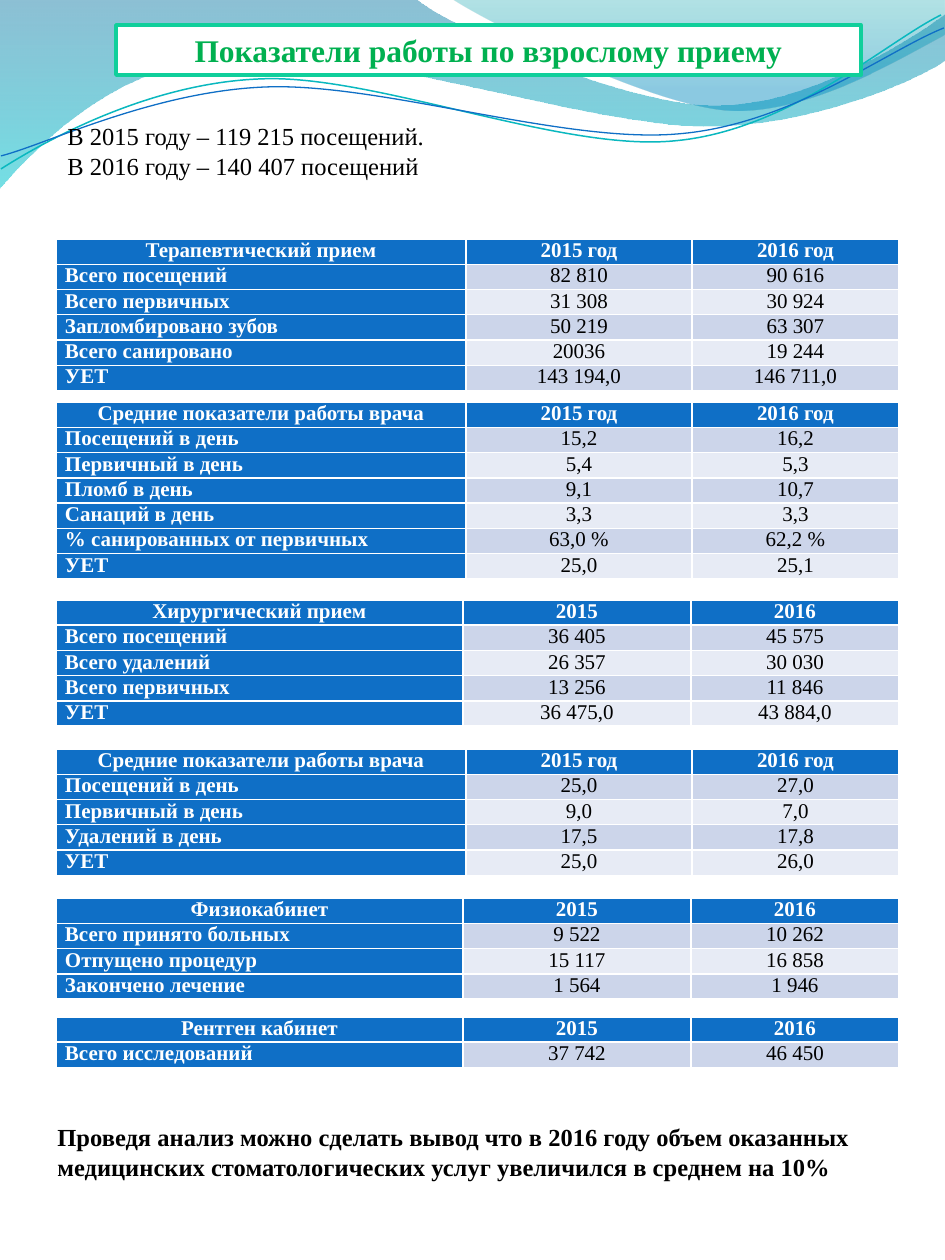
from dataclasses import dataclass

from lxml.etree import SubElement
from pptx import Presentation
from pptx.dml.color import RGBColor
from pptx.enum.text import MSO_ANCHOR as Anchor, MSO_AUTO_SIZE as AutoSize, PP_ALIGN as Align
from pptx.oxml import parse_xml
from pptx.oxml.ns import nsdecls, qn
from pptx.util import Pt

EMU_PER_PX = 914400 / 126
TABLE_LEFT = 56
ROW_HEIGHT = 25
CELL_MARGIN = 9


@dataclass(frozen=True)
class Theme:
    font: str = "Times New Roman"
    title_size: int = 18
    text_size: int = 14
    table_size: int = 12
    white: str = "FFFFFF"
    black: str = "000000"
    title: str = "00B050"
    frame: str = "10CF9B"
    accent: str = "0F6FC6"
    teal: str = "0AB8BF"
    bands: tuple = ("CCD5EA", "E7EBF5")
    broad_wave: tuple = ((0, "0074A1", 45), (100, "00C6CF", 55))
    corner_wave: tuple = ((0, "00A1A9", 30), (80, "008BBF", 45))


THEME = Theme()

BROAD_WAVE = [
    (0, -1), (416, -1), (450, 28, 627, 106, 717, 106), (806, 106, 906, 43, 945, 15),
    (946, 60), (930, 73, 822, 127, 704, 127), (587, 126, 360, 47, 243, 57),
    (122, 59, 43, 140, -1, 190),
]
CORNER_WAVE = [
    (452, -1), (481, 19, 644, 103, 727, 110), (809, 116, 908, 54, 945, 35), (945, 0),
]
TEAL_CURVE = [
    (1, 169), (45, 141, 149, 83, 261, 79), (373, 74, 561, 152, 674, 141),
    (789, 131, 886, 42, 941, 15),
]
BLUE_CURVE = [
    (1, 156), (45, 145, 154, 91, 267, 87), (381, 83, 565, 144, 678, 134),
    (791, 125, 888, 50, 944, 28),
]

WIDE_COLUMNS = (410, 226, 207)
NARROW_COLUMNS = (407, 228, 208)
AVERAGES_HEADER = ("Средние показатели работы врача", "2015 год", "2016 год")

TABLES = [
    (239, WIDE_COLUMNS, Align.JUSTIFY, [
        ("Терапевтический прием", "2015 год", "2016 год"),
        ("Всего посещений", "82 810", "90 616"),
        ("Всего первичных", "31 308", "30 924"),
        ("Запломбировано зубов", "50 219", "63 307"),
        ("Всего санировано", "20036", "19 244"),
        ("УЕТ", "143 194,0", "146 711,0"),
    ]),
    (402, WIDE_COLUMNS, Align.LEFT, [
        AVERAGES_HEADER,
        ("Посещений в день", "15,2", "16,2"),
        ("Первичный в день", "5,4", "5,3"),
        ("Пломб в день", "9,1", "10,7"),
        ("Санаций в день", "3,3", "3,3"),
        ("% санированных от первичных", "63,0 %", "62,2 %"),
        ("УЕТ", "25,0", "25,1"),
    ]),
    (600, NARROW_COLUMNS, Align.JUSTIFY, [
        ("Хирургический прием", "2015", "2016"),
        ("Всего посещений", "36 405", "45 575"),
        ("Всего удалений", "26 357", "30 030"),
        ("Всего первичных", "13 256", "11 846"),
        ("УЕТ", "36 475,0", "43 884,0"),
    ]),
    (749, WIDE_COLUMNS, Align.LEFT, [
        AVERAGES_HEADER,
        ("Посещений в день", "25,0", "27,0"),
        ("Первичный в день", "9,0", "7,0"),
        ("Удалений в день", "17,5", "17,8"),
        ("УЕТ", "25,0", "26,0"),
    ]),
    (898, NARROW_COLUMNS, Align.JUSTIFY, [
        ("Физиокабинет", "2015", "2016"),
        ("Всего принято больных", "9 522", "10 262"),
        ("Отпущено процедур", "15 117", "16 858"),
        ("Закончено лечение", "1 564", "1 946"),
    ]),
    (1017, NARROW_COLUMNS, Align.JUSTIFY, [
        ("Рентген кабинет", "2015", "2016"),
        ("Всего исследований", "37 742", "46 450"),
    ]),
]


def px(value):
    return round(value * EMU_PER_PX)


def color(value):
    return RGBColor.from_string(value)


def add_run(paragraph, text, size, rgb, bold=False):
    run = paragraph.add_run()
    run.text = text
    run.font.name = THEME.font
    run.font.size = Pt(size)
    run.font.bold = bold
    run.font.color.rgb = color(rgb)


def bend_lines(shape, segments):
    lines = list(shape.element.iter(qn("a:lnTo")))
    for line, segment in zip(lines, segments):
        if len(segment) == 2:
            continue
        line.clear()
        line.tag = qn("a:cubicBezTo")
        for x, y in zip(segment[::2], segment[1::2]):
            SubElement(line, qn("a:pt"), x=str(px(x) - shape.left), y=str(px(y) - shape.top))


def add_outline(slide, segments, close):
    start, *rest = [(px(segment[-2]), px(segment[-1])) for segment in segments]
    builder = slide.shapes.build_freeform(*start)
    builder.add_line_segments(rest, close=close)
    shape = builder.convert_to_shape()
    bend_lines(shape, segments[1:])
    shape.shadow.inherit = False
    shape.fill.background()
    return shape


def add_wave(slide, segments, stops):
    shape = add_outline(slide, segments, True)
    shape.line.fill.background()
    stop_xml = "".join(
        f'<a:gs pos="{position * 1000}"><a:srgbClr val="{rgb}">'
        f'<a:alpha val="{opacity * 1000}"/></a:srgbClr></a:gs>'
        for position, rgb, opacity in stops
    )
    gradient = parse_xml(
        f'<a:gradFill {nsdecls("a")}><a:gsLst>{stop_xml}</a:gsLst>'
        '<a:lin ang="5400000" scaled="0"/></a:gradFill>'
    )
    properties = shape.element.spPr
    properties.replace(properties.find(qn("a:noFill")), gradient)


def add_curve(slide, segments, rgb, width):
    shape = add_outline(slide, segments, False)
    shape.line.color.rgb = color(rgb)
    shape.line.width = Pt(width)


def format_title(slide, text):
    title = slide.shapes.title
    slide.shapes.element.append(title.element)
    title.left, title.top, title.width, title.height = map(px, (116, 25, 745, 50))
    title.fill.solid()
    title.fill.fore_color.rgb = color(THEME.white)
    title.line.color.rgb = color(THEME.frame)
    title.line.width = Pt(2)
    frame = title.text_frame
    frame.auto_size = AutoSize.NONE
    frame.vertical_anchor = Anchor.MIDDLE
    frame.paragraphs[0].alignment = Align.CENTER
    add_run(frame.paragraphs[0], text, THEME.title_size, THEME.title, True)


def add_text(slide, box, lines, bold=False):
    frame = slide.shapes.add_textbox(*map(px, box)).text_frame
    frame.word_wrap = True
    for index, line in enumerate(lines):
        paragraph = frame.add_paragraph() if index else frame.paragraphs[0]
        add_run(paragraph, line, THEME.text_size, THEME.black, bold)


def format_cell(cell, text, row, column, label_alignment):
    is_label = row == 0 or column == 0
    cell.fill.solid()
    cell.fill.fore_color.rgb = color(THEME.accent if is_label else THEME.bands[(row - 1) % 2])
    cell.margin_left = cell.margin_right = px(CELL_MARGIN)
    cell.margin_top = cell.margin_bottom = 0
    paragraph = cell.text_frame.paragraphs[0]
    paragraph.alignment = label_alignment if row and not column else Align.CENTER
    add_run(paragraph, text, THEME.table_size, THEME.white if is_label else THEME.black, is_label)


def add_data_table(slide, top, widths, label_alignment, rows):
    box = (TABLE_LEFT, top, sum(widths), ROW_HEIGHT * len(rows))
    table = slide.shapes.add_table(len(rows), len(widths), *map(px, box)).table
    table.first_col = True
    for column, width in zip(table.columns, widths):
        column.width = px(width)
    for row_index, values in enumerate(rows):
        table.rows[row_index].height = px(ROW_HEIGHT)
        for column_index, text in enumerate(values):
            cell = table.cell(row_index, column_index)
            format_cell(cell, text, row_index, column_index, label_alignment)


def main():
    presentation = Presentation()
    presentation.slide_width, presentation.slide_height = px(945), px(1260)
    slide = presentation.slides.add_slide(presentation.slide_layouts[5])
    add_wave(slide, BROAD_WAVE, THEME.broad_wave)
    add_wave(slide, CORNER_WAVE, THEME.corner_wave)
    add_curve(slide, TEAL_CURVE, THEME.teal, 0.85)
    add_curve(slide, BLUE_CURVE, THEME.accent, 0.75)
    format_title(slide, "Показатели работы по взрослому приему")
    add_text(slide, (55, 115, 473, 72), [
        "В 2015 году – 119 215 посещений.",
        "В 2016 году – 140 407 посещений",
    ])
    for table in TABLES:
        add_data_table(slide, *table)
    add_text(slide, (45, 1116, 843, 72), [
        "Проведя анализ можно сделать вывод что в 2016 году объем оказанных "
        "медицинских стоматологических услуг увеличился в среднем на 10%",
    ], bold=True)
    presentation.save("out.pptx")


if __name__ == "__main__":
    main()
